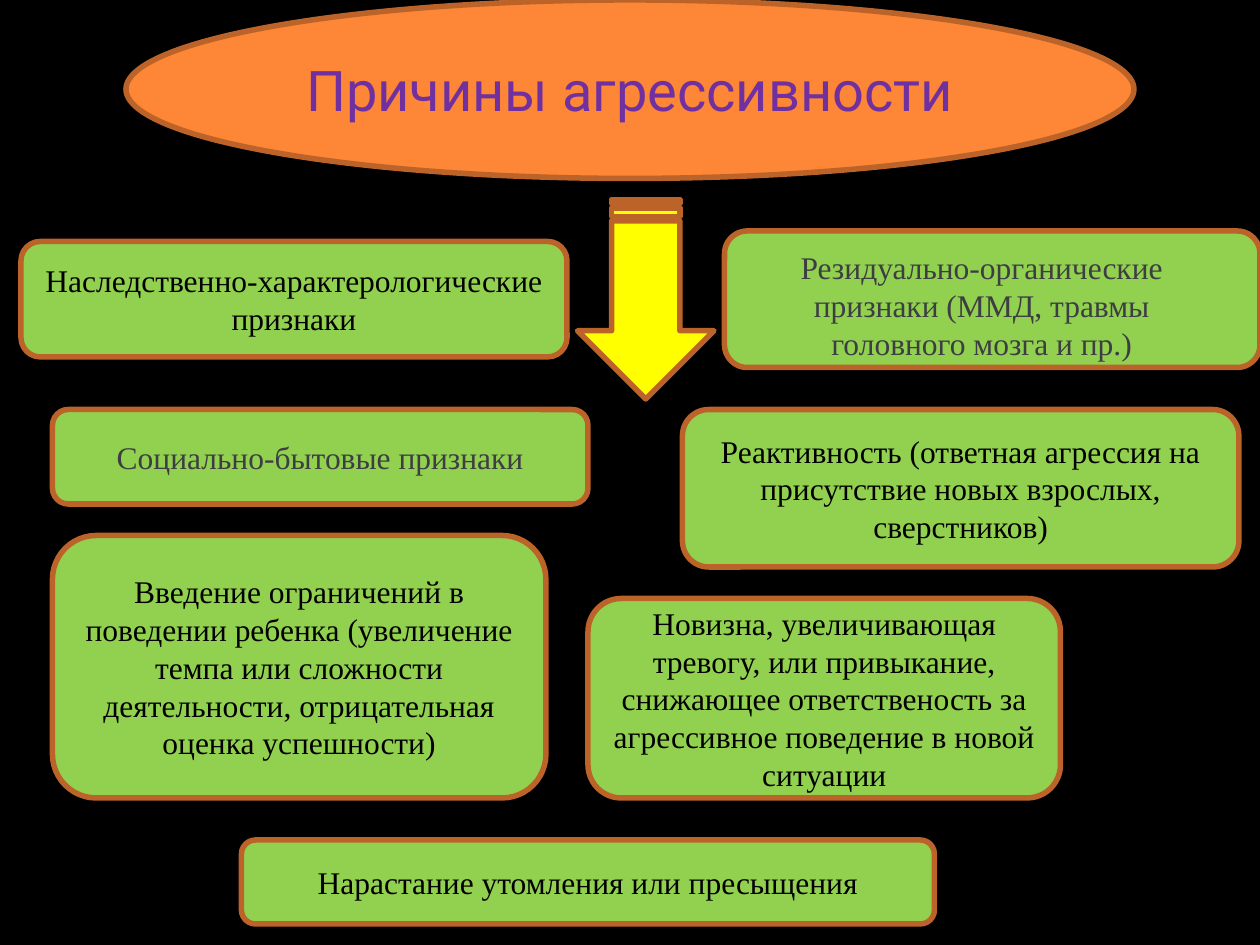
from pptx import Presentation
from pptx.dml.color import RGBColor
from pptx.enum.shapes import MSO_SHAPE
from pptx.enum.text import MSO_ANCHOR, PP_ALIGN
from pptx.util import Pt

OVAL = MSO_SHAPE.OVAL
ROUNDED = MSO_SHAPE.ROUNDED_RECTANGLE
STRIPED_ARROW = MSO_SHAPE.STRIPED_RIGHT_ARROW
MIDDLE = MSO_ANCHOR.MIDDLE
CENTER = PP_ALIGN.CENTER

THEME = {
    "background": "000000", "oval": "FE8637", "card": "92D050",
    "arrow": "FFFF00", "line": "BC6329", "line_width": 3.15,
    "title": "7030A0", "text": "000000", "muted": "3C3E42",
    "title_font": "Roboto", "body_font": "Times New Roman",
    "title_size": 32, "body_size": 18,
}

TITLE = "Причины агрессивности"
TITLE_BOX = (72, 0, 576, 102)
ARROW_BOX = (312, 132, 114, 78)
CAUSES = [
    ("Наследственно-характерологические признаки", (12, 138, 312, 66), "text"),
    ("Социально-бытовые признаки", (30, 234, 306, 54), "muted"),
    ("Реактивность (ответная агрессия на присутствие новых взрослых, "
     "сверстников)", (390, 234, 318, 90), "text"),
    ("Введение ограничений в поведении ребенка (увеличение темпа или "
     "сложности деятельности, отрицательная оценка успешности)",
     (30, 306, 282, 150), "text"),
    ("Новизна, увеличивающая тревогу, или привыкание, снижающее "
     "ответственость за агрессивное поведение в новой ситуации",
     (336, 342, 270, 114), "text"),
    ("Нарастание утомления или пресыщения", (138, 480, 396, 48), "text"),
]
ORGANIC_CARD = (414, 132, 306, 78)
ORGANIC_TEXT_BOX = (426, 138, 270, 72.7)
ORGANIC_TEXT = ("Резидуально-органические признаки (ММД, травмы "
                "головного мозга и пр.)")


def color(name):
    return RGBColor.from_string(THEME[name])


def points(box):
    return [Pt(v) for v in box]


def write(sp, text, font="body_font", size="body_size", ink="text"):
    tf = sp.text_frame
    tf.word_wrap = True
    tf.vertical_anchor = MIDDLE
    p = tf.paragraphs[0]
    p.alignment = CENTER
    r = p.add_run()
    r.text = text
    r.font.name = THEME[font]
    r.font.size = Pt(THEME[size])
    r.font.color.rgb = color(ink)


def add_outlined(s, kind, box, fill):
    sp = s.shapes.add_shape(kind, *points(box))
    sp.shadow.inherit = False
    sp.fill.solid()
    sp.fill.fore_color.rgb = color(fill)
    sp.line.color.rgb = color("line")
    sp.line.width = Pt(THEME["line_width"])
    return sp


def main():
    prs = Presentation()
    prs.slide_width, prs.slide_height = Pt(720), Pt(540)
    s = prs.slides.add_slide(prs.slide_layouts[5])
    s.background.fill.solid()
    s.background.fill.fore_color.rgb = color("background")

    oval = add_outlined(s, OVAL, TITLE_BOX, "oval")
    title = s.shapes.title
    title.left, title.top, title.width, title.height = points(TITLE_BOX)
    write(title, TITLE, font="title_font", size="title_size", ink="title")
    oval.element.addnext(title.element)

    for text, box, ink in CAUSES:
        write(add_outlined(s, ROUNDED, box, "card"), text, ink=ink)

    add_outlined(s, ROUNDED, ORGANIC_CARD, "card")
    organic = s.shapes.add_textbox(*points(ORGANIC_TEXT_BOX))
    write(organic, ORGANIC_TEXT, ink="muted")

    arrow = add_outlined(s, STRIPED_ARROW, ARROW_BOX, "arrow")
    arrow.rotation = 90

    prs.save("out.pptx")


if __name__ == "__main__":
    main()
